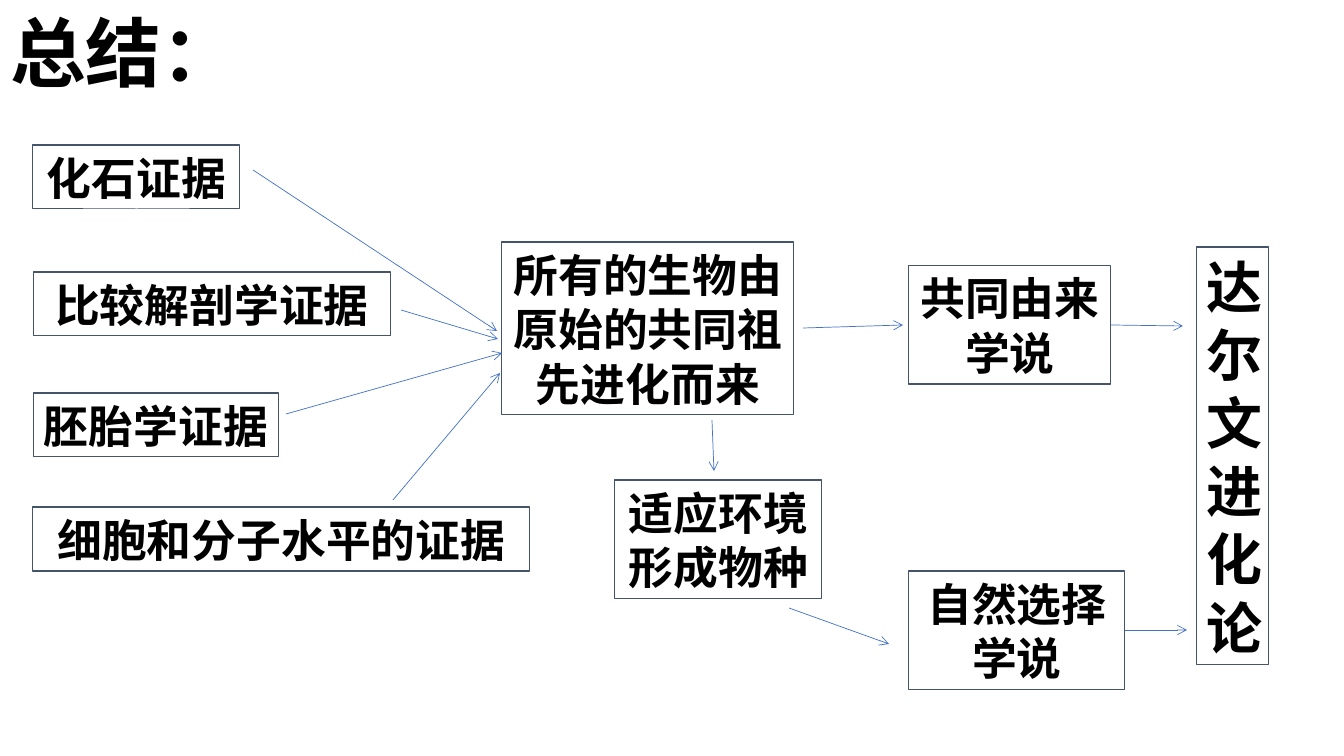
from dataclasses import dataclass
from lxml import etree
from pptx import Presentation
from pptx.dml.color import RGBColor
from pptx.enum.shapes import MSO_CONNECTOR, MSO_SHAPE
from pptx.enum.text import MSO_ANCHOR, MSO_AUTO_SIZE, PP_ALIGN
from pptx.oxml.ns import qn
from pptx.util import Pt

RECT = MSO_SHAPE.RECTANGLE
LINE = MSO_CONNECTOR.STRAIGHT
MID = MSO_ANCHOR.MIDDLE
GROW = MSO_AUTO_SIZE.SHAPE_TO_FIT_TEXT
LEFT, CENTER = PP_ALIGN.LEFT, PP_ALIGN.CENTER


@dataclass(frozen=True)
class Theme:
    font: str = "Noto Sans CJK SC"
    ink: RGBColor = RGBColor(0, 0, 0)
    edge: RGBColor = RGBColor(0x44, 0x54, 0x6A)
    arrow: RGBColor = RGBColor(0x44, 0x72, 0xC4)
    title: int = 54
    body: int = 32
    large: int = 40
    lead: float = 1.215


THEME = Theme()

# Content: lengths in px
WIDE, HIGH = 1344, 756
TITLE = "总结："
SIDE = 33
PROOFS = [  # text, top, width
    ("化石证据", 145, 207),
    ("比较解剖学证据", 272, 358),
    ("胚胎学证据", 393, 246),
    ("细胞和分子水平的证据", 507, 497),
]
IDEAS = [  # text, left, top, width, lines, size
    ("所有的生物由原始的共同祖先进化而来", 502, 242, 292, 3, THEME.body),
    ("共同由来学说", 909, 265, 202, 2, THEME.body),
    ("适应环境形成物种", 615, 480, 207, 2, THEME.body),
    ("自然选择学说", 909, 571, 216, 2, THEME.body),
    ("达尔文进化论", 1197, 247, 72, 6, THEME.large),
]
ARROWS = [  # from x, y, to x, y
    (253, 170, 497, 331),
    (401, 310, 498, 339),
    (286, 414, 502, 353),
    (393, 500, 500, 373),
    (803, 328, 903, 325),
    (712, 420, 714, 471),
    (789, 608, 889, 644),
    (1111, 325, 1183, 326),
    (1125, 630, 1187, 630),
]

# Scale: 100.8 px to the inch, 1.4 px to the point
UNIT = 914400 / 100.8
PER_PT = 1.4
INSET = 10  # top and bottom margins together


def px(*nums):
    return [round(n * UNIT) for n in nums]


def tall(lines, size):
    return round(lines * size * THEME.lead * PER_PT) + INSET


def write(shape, text, size, align):
    frame = shape.text_frame
    frame.word_wrap = True
    frame.auto_size = GROW
    frame.vertical_anchor = MID
    para = frame.paragraphs[0]
    para.alignment = align
    para.line_spacing = Pt(size * THEME.lead)
    para.space_before = Pt(0)
    run = para.add_run()
    run.text = text
    font = run.font
    font.size, font.bold, font.name = Pt(size), True, THEME.font
    font.color.rgb = THEME.ink
    east = etree.SubElement(run._r.get_or_add_rPr(), qn("a:ea"))
    east.set("typeface", THEME.font)


def box(slide, text, left, top, width, lines, size):
    area = px(left, top, width, tall(lines, size))
    shape = slide.shapes.add_shape(RECT, *area)
    shape.shadow.inherit = False
    shape.fill.background()
    shape.line.color.rgb = THEME.edge
    shape.line.width = Pt(0.75)
    write(shape, text, size, CENTER)


def arrow(slide, *ends):
    link = slide.shapes.add_connector(LINE, *px(*ends))
    link.line.color.rgb = THEME.arrow
    link.line.width = Pt(0.5)
    etree.SubElement(link.line._get_or_add_ln(), qn("a:tailEnd")).set("type", "arrow")
    etree.SubElement(link._element.spPr, qn("a:effectLst"))


def main():
    deck = Presentation()
    deck.slide_width, deck.slide_height = px(WIDE, HIGH)
    slide = deck.slides.add_slide(deck.slide_layouts[5])

    # Title
    head = slide.shapes.title
    head.left, head.top, head.width, head.height = px(0, 0, 982, tall(1, THEME.title))
    write(head, TITLE, THEME.title, LEFT)

    # Boxes
    for text, top, width in PROOFS:
        box(slide, text, SIDE, top, width, 1, THEME.body)
    for idea in IDEAS:
        box(slide, *idea)

    # Arrows
    for ends in ARROWS:
        arrow(slide, *ends)

    deck.save("out.pptx")


if __name__ == "__main__":
    main()
